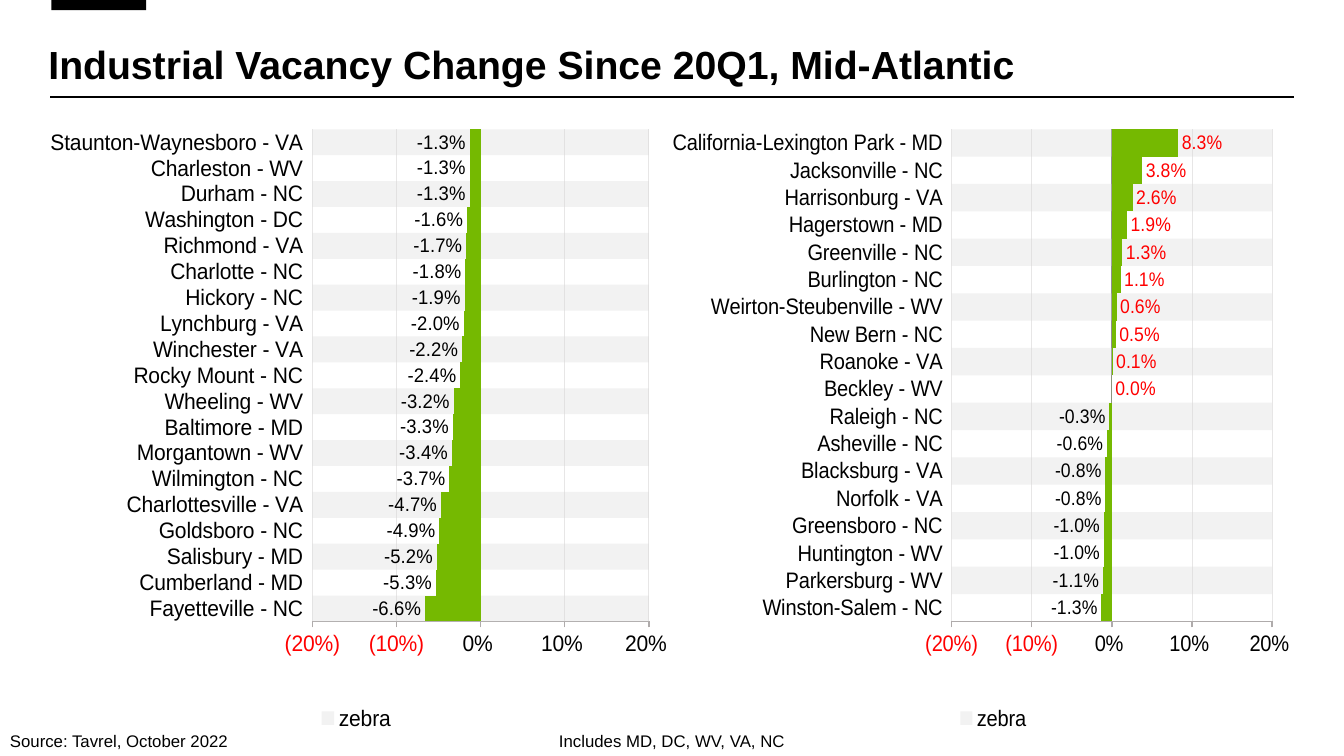
from copy import deepcopy

from lxml import etree
from pptx import Presentation
from pptx.chart.data import CategoryChartData
from pptx.dml.color import RGBColor
from pptx.enum.chart import (XL_CHART_TYPE, XL_LABEL_POSITION, XL_LEGEND_POSITION,
                             XL_TICK_LABEL_POSITION, XL_TICK_MARK)
from pptx.enum.shapes import MSO_CONNECTOR, MSO_SHAPE
from pptx.enum.text import MSO_ANCHOR, MSO_AUTO_SIZE, PP_ALIGN
from pptx.oxml import parse_xml
from pptx.oxml.ns import nsdecls, qn
from pptx.util import Inches, Pt

BAR_CLUSTERED = XL_CHART_TYPE.BAR_CLUSTERED
OUTSIDE_END = XL_LABEL_POSITION.OUTSIDE_END
TITLE_ONLY = 5

BLACK = RGBColor(0x00, 0x00, 0x00)
RED = RGBColor(0xFF, 0x00, 0x00)
GREEN = RGBColor(0x75, 0xB9, 0x01)
STRIPE = RGBColor(0xD9, 0xD9, 0xD9)
GRID = RGBColor(0xE7, 0xE6, 0xE6)
CATEGORY_LINE = RGBColor(0x89, 0x89, 0x89)
VALUE_LINE = RGBColor(0xAF, 0xAB, 0xAB)

FONT = "Arial"
STRIPE_LENGTH = 100000000
PLOT_LAYOUT = {"x": 0.519, "y": 0.048, "w": 0.575, "h": 0.774}

LARGEST_DECLINES = [
    ("Fayetteville - NC", -0.066), ("Cumberland - MD", -0.053),
    ("Salisbury - MD", -0.052), ("Goldsboro - NC", -0.049),
    ("Charlottesville - VA", -0.047), ("Wilmington - NC", -0.037),
    ("Morgantown - WV", -0.034), ("Baltimore - MD", -0.033),
    ("Wheeling - WV", -0.032), ("Rocky Mount - NC", -0.024),
    ("Winchester - VA", -0.022), ("Lynchburg - VA", -0.02),
    ("Hickory - NC", -0.019), ("Charlotte - NC", -0.018),
    ("Richmond - VA", -0.017), ("Washington - DC", -0.016),
    ("Durham - NC", -0.013), ("Charleston - WV", -0.013),
    ("Staunton-Waynesboro - VA", -0.013),
]
SMALL_DECLINES_AND_RISES = [
    ("Winston-Salem - NC", -0.013), ("Parkersburg - WV", -0.011),
    ("Huntington - WV", -0.01), ("Greensboro - NC", -0.01),
    ("Norfolk - VA", -0.008), ("Blacksburg - VA", -0.008),
    ("Asheville - NC", -0.006), ("Raleigh - NC", -0.003),
    ("Beckley - WV", 0), ("Roanoke - VA", 0.001),
    ("New Bern - NC", 0.005), ("Weirton-Steubenville - WV", 0.006),
    ("Burlington - NC", 0.011), ("Greenville - NC", 0.013),
    ("Hagerstown - MD", 0.019), ("Harrisonburg - VA", 0.026),
    ("Jacksonville - NC", 0.038), ("California-Lexington Park - MD", 0.083),
]


def set_font(font, size, color=BLACK, bold=False):
    font.name = FONT
    font.size = Pt(size)
    font.bold = bold
    font.color.rgb = color


def set_line(line, color, width):
    line.color.rgb = color
    line.width = Pt(width)


def add_header(slide, left, top, width, text):
    """Place the black tab, the title and the rule under it."""
    tab = slide.shapes.add_shape(MSO_SHAPE.RECTANGLE, left + Inches(0.01), top,
                                 Inches(0.94), Inches(0.1))
    tab.shadow.inherit = False
    tab.fill.solid()
    tab.fill.fore_color.rgb = BLACK
    tab.line.fill.background()

    rule_top = top + Inches(0.96)
    rule = slide.shapes.add_connector(MSO_CONNECTOR.STRAIGHT, left, rule_top,
                                      left + width, rule_top)
    set_line(rule.line, BLACK, 1.5)
    etree.SubElement(rule._element.spPr, qn("a:effectLst"))

    title = slide.shapes.title
    title.left, title.top = left - Inches(0.12), top + Inches(0.4)
    title.width, title.height = width + Inches(0.12), Inches(0.88)
    title.text_frame.text = text
    title.text_frame.auto_size = MSO_AUTO_SIZE.NONE
    title.text_frame.vertical_anchor = MSO_ANCHOR.TOP
    paragraph = title.text_frame.paragraphs[0]
    paragraph.alignment = PP_ALIGN.LEFT
    paragraph.line_spacing = 0.9
    set_font(paragraph.font, 28, bold=True)


def add_footnote(slide, left, top, text, alignment):
    box = slide.shapes.add_textbox(left, top, Inches(3.41), Inches(0.3))
    box.text_frame.word_wrap = True
    box.text_frame.auto_size = MSO_AUTO_SIZE.SHAPE_TO_FIT_TEXT
    box.text_frame.text = text
    paragraph = box.text_frame.paragraphs[0]
    paragraph.alignment = alignment
    set_font(paragraph.font, 12)


def format_axes(chart):
    category_axis, value_axis = chart.category_axis, chart.value_axis
    category_axis.tick_label_position = XL_TICK_LABEL_POSITION.LOW
    category_axis.major_tick_mark = XL_TICK_MARK.NONE
    set_line(category_axis.format.line, CATEGORY_LINE, 0.5)

    value_axis.minimum_scale, value_axis.maximum_scale = -0.2, 0.2
    value_axis.major_unit = 0.1
    value_axis.major_tick_mark = XL_TICK_MARK.OUTSIDE
    set_line(value_axis.format.line, VALUE_LINE, 1.25)
    set_line(value_axis.major_gridlines.format.line, GRID, 0.5)
    value_axis.tick_labels.number_format = r"#,##0%_);[Red]\(#,##0%\)"
    value_axis.tick_labels.number_format_is_linked = False
    for axis in (category_axis, value_axis):
        axis.minor_tick_mark = XL_TICK_MARK.NONE
        set_font(axis.tick_labels.font, 16)


def format_series(series, color, opacity=100):
    series.invert_if_negative = False
    series.format.fill.solid()
    series.format.fill.fore_color.rgb = color
    if opacity < 100:
        color_element = series._element.find(".//" + qn("a:srgbClr"))
        etree.SubElement(color_element, qn("a:alpha"), val=str(opacity * 1000))


def label_changes(series):
    """Label every bar, with red for markets that did not decline."""
    labels = series.data_labels
    labels.show_value = True
    labels.number_format = "0.0%"
    labels.number_format_is_linked = False
    labels.position = OUTSIDE_END
    set_font(labels.font, 14)
    for index, value in enumerate(series.values):
        if value >= 0:
            label = series.points[index].data_label
            set_font(label.font, 14, RED)
            label.position = OUTSIDE_END
    number_format = labels._element.find(qn("c:numFmt"))
    for label_element in labels._element.findall(qn("c:dLbl")):
        label_element.insert(1, deepcopy(number_format))


def move_last_series_to_second_axes(plot_area):
    bars = plot_area.find(qn("c:barChart"))
    category_axis, value_axis = (plot_area.find(qn(tag)) for tag in ("c:catAx", "c:valAx"))
    second = [deepcopy(element) for element in (bars, value_axis, category_axis)]
    second_bars, second_value_axis, _ = second

    bars.remove(bars.findall(qn("c:ser"))[-1])
    for series in second_bars.findall(qn("c:ser"))[:-1]:
        second_bars.remove(series)
    second_value_axis.remove(second_value_axis.find(qn("c:majorGridlines")))
    second_value_axis.find(qn("c:crosses")).set("val", "max")

    new_ids = {category_axis.find(qn("c:axId")).get("val"): "50010",
               value_axis.find(qn("c:axId")).get("val"): "50020"}
    for element in second:
        for reference in element.findall(qn("c:axId")) + element.findall(qn("c:crossAx")):
            reference.set("val", new_ids[reference.get("val")])
    for axis in second[1:]:
        axis.find(qn("c:delete")).set("val", "1")
    bars.addnext(second_bars)
    value_axis.addnext(second[2])
    value_axis.addnext(second_value_axis)


def set_plot_layout(plot_area):
    for layout in plot_area.findall(qn("c:layout")):
        plot_area.remove(layout)
    modes = "".join(f'<c:{key}Mode val="edge"/>' for key in "xy")
    sizes = "".join(f'<c:{key} val="{value}"/>' for key, value in PLOT_LAYOUT.items())
    plot_area.insert(0, parse_xml(
        f'<c:layout {nsdecls("c")}><c:manualLayout><c:layoutTarget val="inner"/>'
        f'{modes}{sizes}</c:manualLayout></c:layout>'))


def add_legend(chart, hidden_entries):
    chart.has_legend = True
    chart.legend.position = XL_LEGEND_POSITION.BOTTOM
    chart.legend.include_in_layout = False
    set_font(chart.legend.font, 16)
    position = chart.legend._element.find(qn("c:legendPos"))
    for index in reversed(hidden_entries):
        position.addnext(parse_xml(
            f'<c:legendEntry {nsdecls("c")}><c:idx val="{index}"/>'
            '<c:delete val="1"/></c:legendEntry>'))


def add_vacancy_chart(slide, left, top, width, height, markets):
    """Place a bar chart of changes over stripes that mark every other row."""
    stripes = [STRIPE_LENGTH * ((len(markets) - row) % 2) for row in range(len(markets))]
    data = CategoryChartData(number_format="0.0%")
    data.categories = [name for name, _ in markets]
    data.add_series("zebra", stripes)
    data.add_series("zebra", [-length for length in stripes])
    data.add_series("Vacancy Change Since 20Q1", [change for _, change in markets])
    chart = slide.shapes.add_chart(BAR_CLUSTERED, left, top, width, height, data).chart
    chart.has_title = False
    set_font(chart.font, 18)

    plot = chart.plots[0]
    plot.vary_by_categories = False
    plot.gap_width, plot.overlap = 0, 100
    *stripe_series, changes = plot.series
    for series in stripe_series:
        format_series(series, STRIPE, 33)
    format_series(changes, GREEN)
    label_changes(changes)
    format_axes(chart)
    add_legend(chart, [0, 2])

    chart_space = chart._chartSpace
    plot_area = chart_space.chart.plotArea
    move_last_series_to_second_axes(plot_area)
    set_plot_layout(plot_area)
    chart_space.chart.addnext(parse_xml(
        f'<c:spPr {nsdecls("c", "a")}><a:noFill/><a:ln><a:noFill/></a:ln></c:spPr>'))


def main():
    presentation = Presentation()
    presentation.slide_width, presentation.slide_height = Inches(13.33), Inches(7.5)
    slide = presentation.slides.add_slide(presentation.slide_layouts[TITLE_ONLY])
    add_header(slide, Inches(0.5), 0, Inches(12.33),
               "Industrial Vacancy Change Since 20Q1, Mid-Atlantic")
    chart_width = Inches(6.17)
    for column, markets in enumerate((LARGEST_DECLINES, SMALL_DECLINES_AND_RISES)):
        add_vacancy_chart(slide, Inches(0.5) + column * chart_width, Inches(0.98),
                          chart_width, Inches(6.31), markets)
    add_footnote(slide, 0, Inches(7.2), "Source: Tavrel, October 2022", PP_ALIGN.LEFT)
    add_footnote(slide, Inches(4.96), Inches(7.2), "Includes MD, DC, WV, VA, NC",
                 PP_ALIGN.CENTER)
    presentation.save("out.pptx")


if __name__ == "__main__":
    main()
